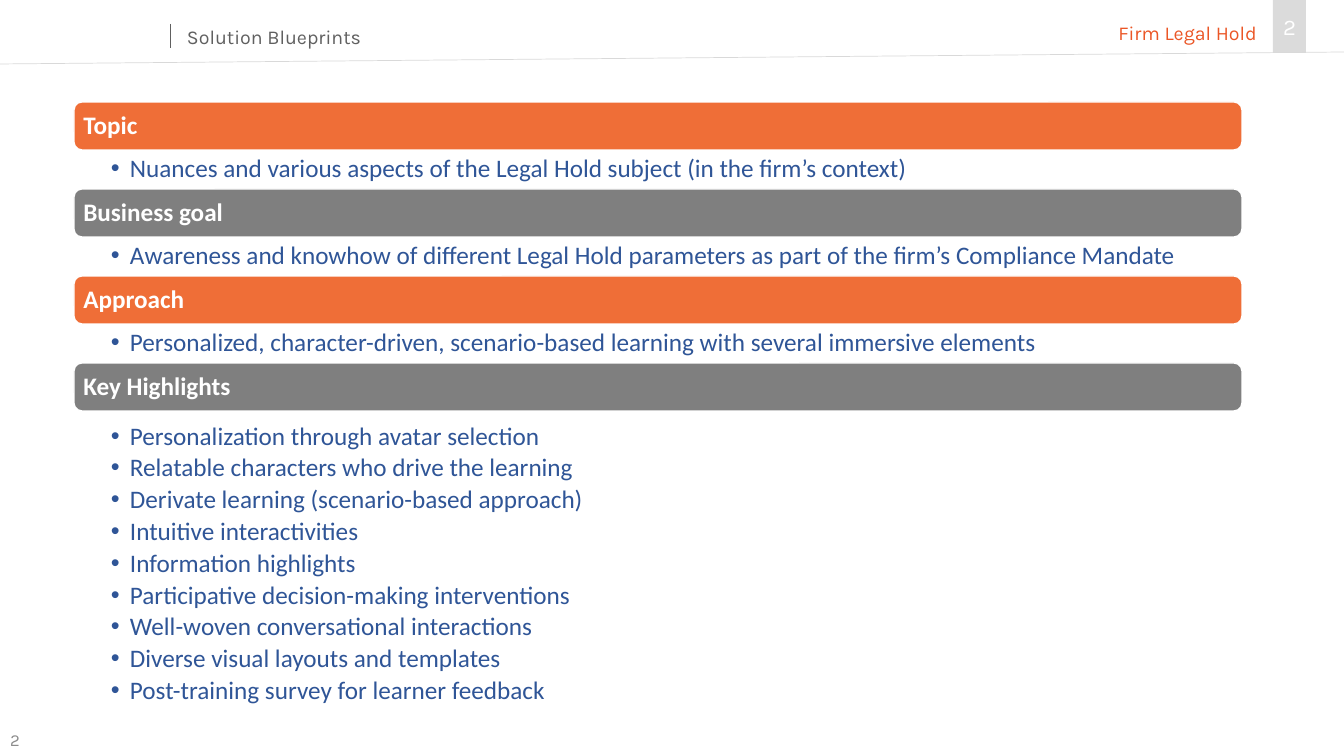
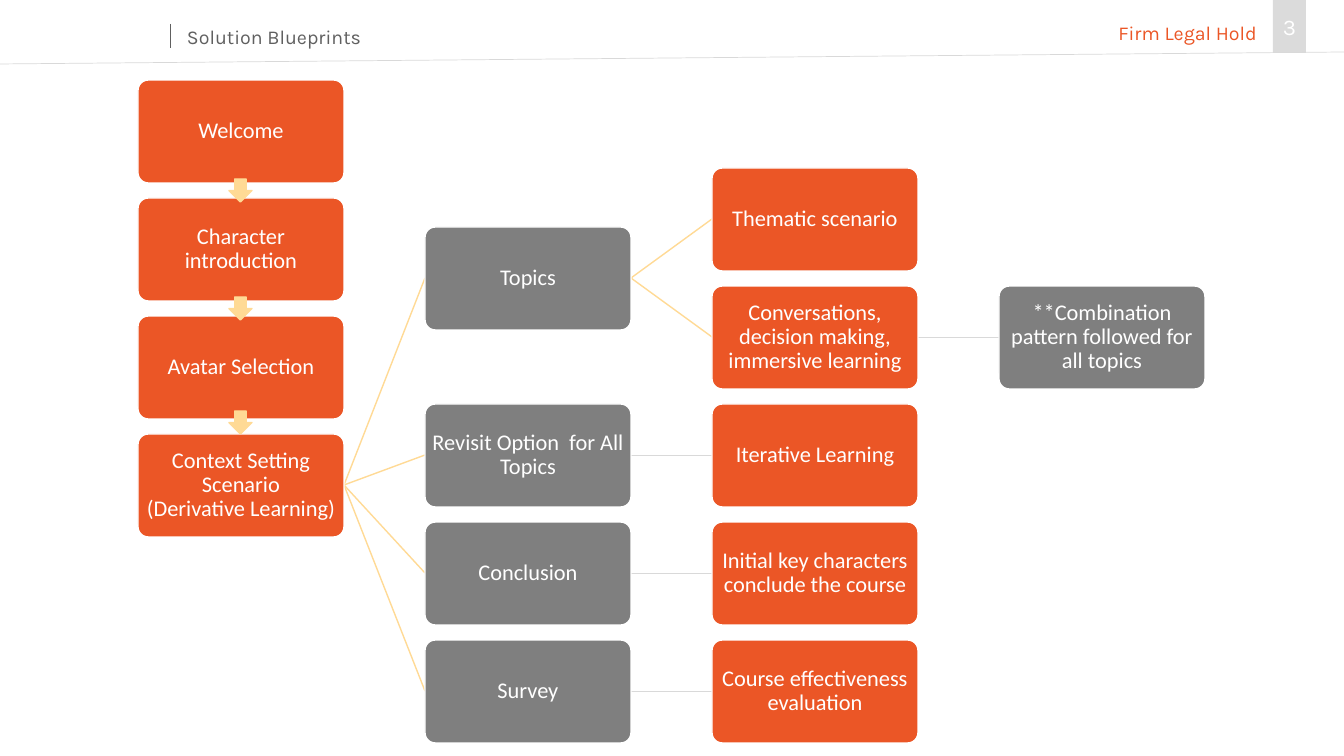
"""Build two legal hold course slides: a blueprint and a flow chart."""
from pptx import Presentation
from pptx.dml.color import RGBColor as Rgb
from pptx.enum.shapes import MSO_CONNECTOR as Conn, MSO_SHAPE as Kind
from pptx.enum.text import MSO_ANCHOR as Anchor, PP_ALIGN as Align
from pptx.util import Emu, Pt
from lxml.etree import SubElement as Sub
from pptx.oxml.ns import qn

HUES = {"flame": "EB5626", "orange": "EF6E37", "grey": "7F7F7F", "blue": "2F5597",
        "sand": "FFDA95", "white": "FFFFFF", "tab": "DBDBDB", "rule": "D9D9D9",
        "slate": "606060", "note": "8C8C8C"}

TOPICS = [
    ("Topic", ["Nuances and various aspects of the Legal Hold subject (in the firm’s context)"]),
    ("Business goal", ["Awareness and knowhow of different Legal Hold parameters "
                       "as part of the firm’s Compliance Mandate"]),
    ("Approach", ["Personalized, character-driven, scenario-based learning "
                  "with several immersive elements"]),
    ("Key Highlights", [
        "Personalization through avatar selection",
        "Relatable characters who drive the learning",
        "Derivate learning (scenario-based approach)",
        "Intuitive interactivities",
        "Information highlights",
        "Participative decision-making interventions",
        "Well-woven conversational interactions",
        "Diverse visual layouts and templates",
        "Post-training survey for learner feedback"]),
]

CARDS = {
    "welcome": (0, 0, "flame", "Welcome"),
    "intro": (0, 1, "flame", "Character introduction"),
    "avatar": (0, 2, "flame", "Avatar Selection"),
    "context": (0, 3, "flame", "Context Setting Scenario\n(Derivative Learning)"),
    "topics": (1, 1.25, "grey", "Topics"),
    "revisit": (1, 2.75, "grey", "Revisit Option  for All Topics"),
    "close": (1, 3.75, "grey", "Conclusion"),
    "survey": (1, 4.75, "grey", "Survey"),
    "theme": (2, 0.75, "flame", "Thematic scenario"),
    "talks": (2, 1.75, "flame", "Conversations, decision making, immersive learning"),
    "loop": (2, 2.75, "flame", "Iterative Learning"),
    "cast": (2, 3.75, "flame", "Initial key characters conclude the course"),
    "rating": (2, 4.75, "flame", "Course effectiveness evaluation"),
    "combo": (3, 1.75, "grey", "**Combination pattern followed for all topics"),
}
LINKS = [("context", "topics"), ("context", "revisit"), ("context", "close"),
         ("context", "survey"), ("topics", "theme"), ("topics", "talks"),
         ("talks", "combo"), ("revisit", "loop"), ("close", "cast"), ("survey", "rating")]
WIDE, HIGH = 206, 103


def px(num):
    """Turn px into EMU."""
    return Emu(round(num * 914400 / 100.8))


def hue(name):
    """Look up a colour by name."""
    return Rgb.from_string(HUES[name])


def write(shape, lines, size, ink, face="Calibri", bold=False, align=Align.LEFT,
          mid=True, pad=(10, 5, 10, 5), after=None, dots=False):
    """Fill a shape with paragraphs of one style."""
    frame = shape.text_frame
    frame.word_wrap = True
    frame.vertical_anchor = Anchor.MIDDLE if mid else Anchor.TOP
    (frame.margin_left, frame.margin_top,
     frame.margin_right, frame.margin_bottom) = map(px, pad)
    for at, line in enumerate(lines):
        para = frame.add_paragraph() if at else frame.paragraphs[0]
        if dots:
            props = para._p.get_or_add_pPr()
            props.set("marL", str(px(19)))
            props.set("indent", str(-px(19)))
            Sub(props, qn("a:buFont"), typeface="Arial")
            Sub(props, qn("a:buChar"), char="•")
        para.alignment = align
        if after is not None:
            para.line_spacing = 0.9
            para.space_after = Pt(after)
        for turn, part in enumerate(line.split("\n")):
            if turn:
                para.add_line_break()
            run = para.add_run()
            run.text = part
            font = run.font
            font.size, font.name, font.bold = Pt(size), face, bold
            font.color.rgb = hue(ink)


def label(slide, box, lines, size, ink, **style):
    """Add a text box."""
    write(slide.shapes.add_textbox(*map(px, box)), lines, size, ink, **style)


def block(slide, kind, box, fill, edge=None):
    """Add a flat preset shape."""
    shape = slide.shapes.add_shape(kind, *map(px, box))
    shape.shadow.inherit = False
    shape.fill.solid()
    shape.fill.fore_color.rgb = hue(fill)
    if edge:
        shape.line.color.rgb = hue(edge)
        shape.line.width = Pt(1)
    else:
        shape.line.fill.background()
    return shape


def stroke(slide, ends, ink, width):
    """Add a straight line."""
    line = slide.shapes.add_connector(Conn.STRAIGHT, *map(px, ends))
    line.line.color.rgb = hue(ink)
    line.line.width = Pt(width)
    Sub(line._element.spPr, qn("a:effectLst"))


def start(deck, page):
    """Add a slide with the shared header."""
    slide = deck.slides.add_slide(deck.slide_layouts[6])
    tab = block(slide, Kind.RECTANGLE, (1273, 0, 33, 53), "tab")
    write(tab, [page], 16, "white", face="Karla", align=Align.CENTER, pad=(0, 5, 0, 5))
    stroke(slide, (1344, 52, 0, 64), "rule", 0.5)
    label(slide, (177, 20, 376, 34), ["Solution Blueprints"], 14, "slate",
          face="Karla", mid=False)
    stroke(slide, (170, 24, 170, 48), "slate", 0.5)
    label(slide, (891, 16, 376, 34), ["Firm Legal Hold"], 14, "flame",
          face="Karla", mid=False, align=Align.RIGHT)
    return slide


def outline(slide):
    """Stack the headed bars and their bullets."""
    label(slide, (0, 720, 91, 40), ["2"], 12, "note", face="Karla")
    for row, (head, items) in enumerate(TOPICS):
        top = 102 + 87 * row
        bar = block(slide, Kind.ROUNDED_RECTANGLE, (74, top, 1168, 48),
                    ("orange", "grey")[row % 2], "white")
        write(bar, [head], 18, "white", bold=True, pad=(7, 7, 7, 7), after=6)
        tall = 39 if len(items) == 1 else 306
        label(slide, (74, top + 48, 1168, tall), items, 18, "blue",
              pad=(37, 3, 14, 3), after=3.25, dots=True)


def spot(name):
    """Give the left and top of a card."""
    col, row = CARDS[name][:2]
    return 138 + 287 * col, round(79.5 + 118 * row)


def flow(slide):
    """Draw the course flow with links, cards and arrows."""
    for left, right in LINKS:
        (x1, y1), (x2, y2) = spot(left), spot(right)
        ink, width = ("rule", 0.5) if y1 == y2 else ("sand", 1)
        stroke(slide, (x1 + WIDE, y1 + HIGH // 2, x2, y2 + HIGH // 2), ink, width)
    for name, (_, _, fill, text) in CARDS.items():
        card = block(slide, Kind.ROUNDED_RECTANGLE, (*spot(name), WIDE, HIGH), fill, "white")
        card.adjustments[0] = 0.1
        write(card, [text], 16, "white", align=Align.CENTER, pad=(1, 1, 1, 1), after=5)
    for top in (179, 297, 411):
        block(slide, Kind.DOWN_ARROW, (229, top, 23, 23), "sand", "sand")


def main():
    """Build and save the deck."""
    deck = Presentation()
    deck.slide_width, deck.slide_height = px(1344), px(756)
    outline(start(deck, "2"))
    flow(start(deck, "3"))
    deck.save("out.pptx")


if __name__ == "__main__":
    main()
